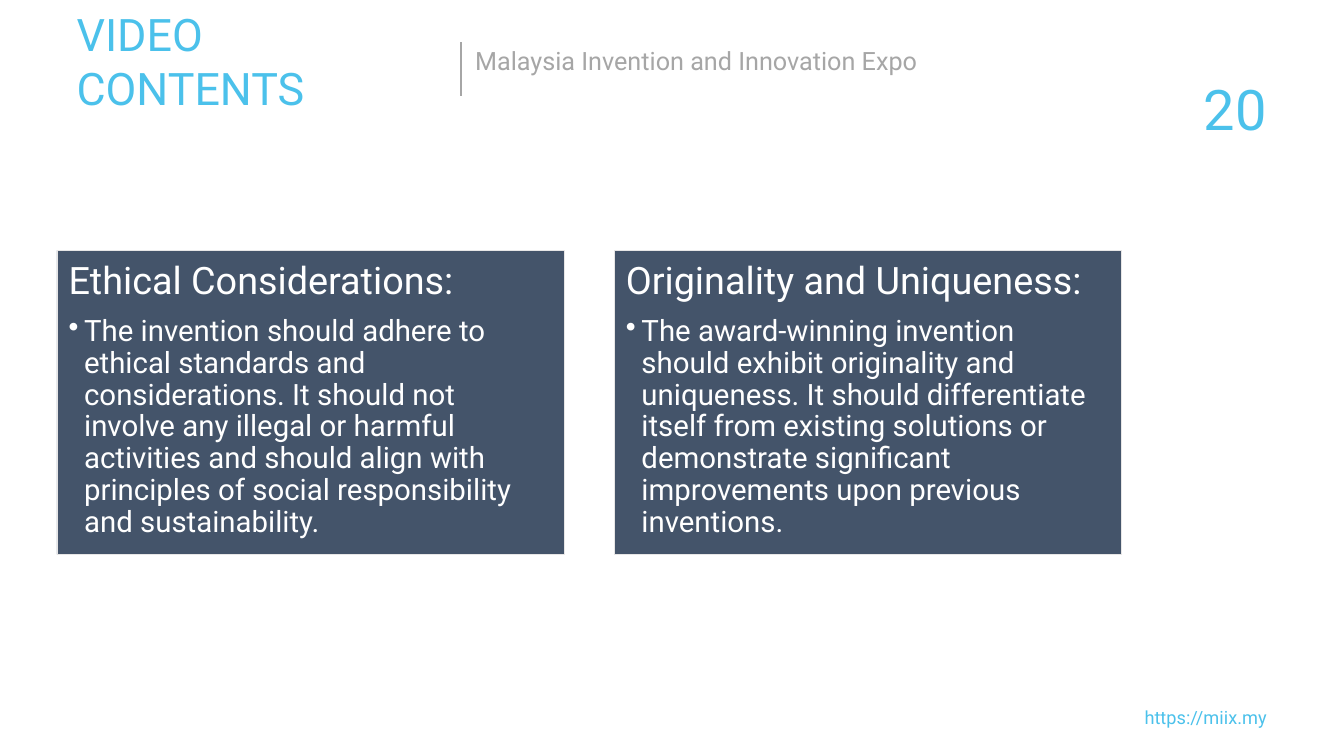
import pptx
import pptx.util
import pptx.dml.color
import pptx.enum.shapes
import pptx.enum.text
import pptx.oxml.ns
import lxml.etree

Inches, Pt = pptx.util.Inches, pptx.util.Pt
RGB = pptx.dml.color.RGBColor
ALIGN = pptx.enum.text.PP_ALIGN
ANCHOR = pptx.enum.text.MSO_ANCHOR
qn = pptx.oxml.ns.qn

SKY = RGB(0x4B, 0xC1, 0xEB)
GREY = RGB(0xA6, 0xA6, 0xA6)
NAVY = RGB(0x44, 0x54, 0x6A)
PALE = RGB(0xE7, 0xE6, 0xE6)
WHITE = RGB(0xFF, 0xFF, 0xFF)
FONT = "Roboto"

CARDS = [
    ("Ethical Considerations:",
     "The invention should adhere to ethical standards and considerations. "
     "It should not involve any illegal or harmful activities and should "
     "align with principles of social responsibility and sustainability."),
    ("Originality and Uniqueness:",
     "The award-winning invention should exhibit originality and uniqueness. "
     "It should differentiate itself from existing solutions or demonstrate "
     "significant improvements upon previous inventions."),
]


def set_frame(frame, inset, anchor):
    frame.word_wrap = True
    frame.vertical_anchor = anchor
    frame.margin_left = frame.margin_right = Inches(inset[0])
    frame.margin_top = frame.margin_bottom = Inches(inset[1])


def set_font(para, size, color):
    para.font.name = FONT
    para.font.size = Pt(size)
    para.font.color.rgb = color


def add_label(slide, box, text, size, color, align=ALIGN.LEFT,
              anchor=ANCHOR.MIDDLE, inset=(0, 0)):
    frame = slide.shapes.add_textbox(*map(Inches, box)).text_frame
    set_frame(frame, inset, anchor)
    para = frame.paragraphs[0]
    para.text = text
    para.alignment = align
    set_font(para, size, color)


def add_header(slide, left, top):
    add_label(slide, (left, top, 6.95, 1.08), "VIDEO CONTENTS", 64, SKY)
    add_label(slide, (left + 7.81, top + 0.19, 9.37, 0.71),
              "Malaysia Invention and Innovation Expo", 36, GREY,
              inset=(0.1, 0.05))
    # Divider between title and event name
    x = Inches(left + 7.63)
    rule = slide.shapes.add_connector(
        pptx.enum.shapes.MSO_CONNECTOR.STRAIGHT,
        x, Inches(top + 0.18), x, Inches(top + 1.25))
    rule.line.color.rgb = GREY
    rule.line.width = Pt(2.25)
    lxml.etree.SubElement(rule._element.spPr, qn("a:effectLst"))


def add_margin(slide, right):
    # Page number and web address share a right edge
    add_label(slide, (right - 3.08, 1.75, 3.08, 0.8), "20", 80, SKY,
              ALIGN.RIGHT)
    add_label(slide, (right - 3.58, 14.01, 3.58, 0.44), "https://miix.my",
              26, SKY, ALIGN.RIGHT, ANCHOR.TOP)


def add_card(slide, box, title, body):
    card = slide.shapes.add_shape(
        pptx.enum.shapes.MSO_SHAPE.RECTANGLE, *map(Inches, box))
    card.shadow.inherit = False
    card.fill.solid()
    card.fill.fore_color.rgb = NAVY
    card.line.color.rgb = PALE
    card.line.width = Pt(1)

    frame = card.text_frame
    set_frame(frame, (0.23, 0.23), ANCHOR.TOP)
    head, point = frame.paragraphs[0], frame.add_paragraph()
    head.text, point.text = title, body
    head.space_after = Pt(19)
    point.level = 1

    # Hanging bullet
    props = point._p.get_or_add_pPr()
    props.set("marL", str(Inches(0.31)))
    props.set("indent", str(-Inches(0.31)))
    lxml.etree.SubElement(props, qn("a:buChar")).set("char", "•")

    for para, size in ((head, 54), (point, 42)):
        para.alignment = ALIGN.LEFT
        para.line_spacing = 0.9
        set_font(para, size, WHITE)


def add_cards(slide, left, top, width, height, gap):
    for i, (title, body) in enumerate(CARDS):
        x = left + i * (width + gap)
        add_card(slide, (x, top, width, height), title, body)


def main():
    deck = pptx.Presentation()
    deck.slide_width, deck.slide_height = Inches(26.67), Inches(15)
    slide = deck.slides.add_slide(deck.slide_layouts[6])
    add_margin(slide, 25.14)
    add_header(slide, 1.52, 0.66)
    add_cards(slide, 1.13, 4.97, 10.06, 6.03, 1)
    deck.save("out.pptx")


if __name__ == "__main__":
    main()
